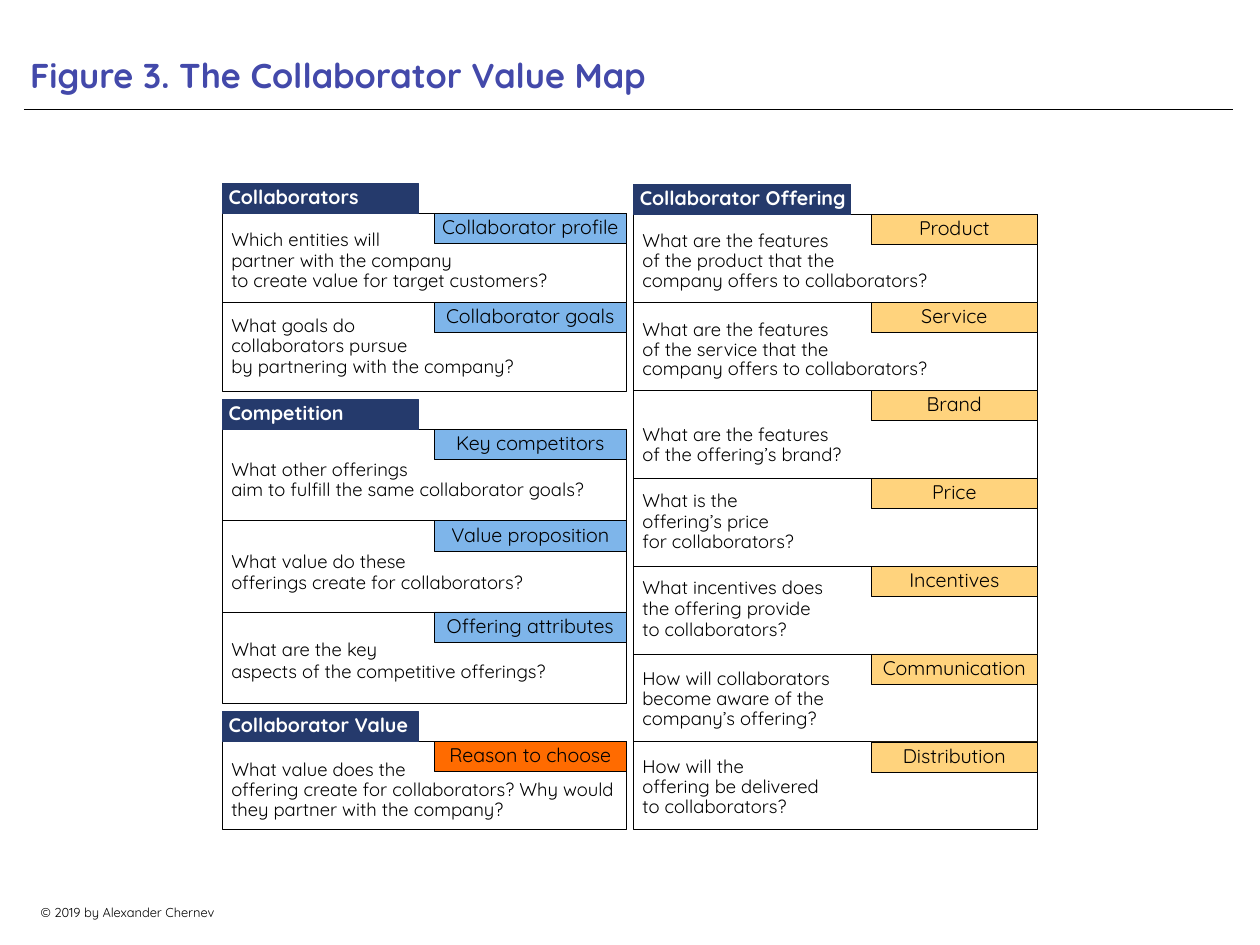
from pptx import Presentation
from pptx.dml.color import RGBColor
from pptx.enum.shapes import MSO_CONNECTOR as Connector, MSO_SHAPE as Preset
from pptx.enum.text import MSO_ANCHOR as Anchor, PP_ALIGN as Align
from pptx.oxml.ns import qn
from pptx.util import Pt
from lxml.etree import SubElement

PX = 9144  # 100 px to the inch
FONT = "Quicksand"
COLORS = {
    "title": "4349AA", "ink": "000000", "paper": "FFFFFF", "header": "253A6C",
    "blue": "7EB5EA", "yellow": "FFD37D", "orange": "FF6B00",
}
TAB_HEIGHT = 34

# Each row: tag, question, middle of the question below the row's top.
# "\n" starts a paragraph, "\v" breaks a line.
COLLABORATORS = [
    ("Collaborator profile", "Which entities will\npartner with the company\v"
     "to create value for target customers?", 54),
    ("Collaborator goals", "What goals do\vcollaborators pursue\n"
     "by partnering with the company?", 50),
]
COMPETITION = [
    ("Key competitors", "What other offerings\v"
     "aim to fulfill the same collaborator goals?", 58),
    ("Value proposition", "What value do these\n"
     "offerings create for collaborators?", 59),
    ("Offering attributes", "What are the key\n"
     "aspects of the competitive offerings?", 56),
]
VALUE = [
    ("Reason to choose", "What value does the\voffering create for collaborators? "
     "Why would they partner with the company?", 56),
]
OFFERING = [
    ("Product", "What are the features\vof the product that the\v"
     "company offers to collaborators?", 53),
    ("Service", "What are the features\vof the service that the\v"
     "company offers to collaborators?", 54),
    ("Brand", "What are the features\vof the offering’s brand?", 63),
    ("Price", "What is the\noffering’s price\vfor collaborators?", 50),
    ("Incentives", "What incentives does\nthe offering provide\n"
     "to collaborators?", 49),
    ("Communication", "How will collaborators\vbecome aware of the\v"
     "company’s offering?", 51),
    ("Distribution", "How will the\voffering be delivered\v"
     "to collaborators?", 52),
]


def color(name):
    return RGBColor.from_string(COLORS[name])


def px(*lengths):
    return [round(length * PX) for length in lengths]


def write(shape, text, size, ink="ink", bold=False, align=Align.LEFT,
          anchor=Anchor.MIDDLE, margins=(0, 0, 0, 0), spacing=0.9):
    frame = shape.text_frame
    frame.word_wrap = True
    frame.vertical_anchor = anchor
    (frame.margin_left, frame.margin_top,
     frame.margin_right, frame.margin_bottom) = px(*margins)
    frame.text = text
    for index, para in enumerate(frame.paragraphs):
        para.alignment = align
        para.line_spacing = spacing
        if index:
            para.space_before = Pt(1)
        font = para.font
        font.name, font.size, font.bold = FONT, Pt(size), bold
        font.color.rgb = color(ink)


def add_box(page, box, fill=None, line="ink", weight=0.75):
    shape = page.shapes.add_shape(Preset.RECTANGLE, *px(*box))
    shape.shadow.inherit = False
    if fill:
        shape.fill.solid()
        shape.fill.fore_color.rgb = color(fill)
    else:
        shape.fill.background()
    shape.line.color.rgb = color(line)
    shape.line.width = Pt(weight)
    return shape


def add_rule(page, left, right, y, weight):
    rule = page.shapes.add_connector(Connector.STRAIGHT, *px(left, y, right, y))
    rule.line.color.rgb = color("ink")
    rule.line.width = Pt(weight)
    SubElement(rule._element.spPr, qn("a:effectLst"))
    return rule


def add_heading(page, box):
    left, top, width, height = box
    add_rule(page, left, left + width, top + height + 9, 0.5)
    title = page.shapes.add_textbox(*px(*box))
    write(title, "Figure 3. The Collaborator Value Map", 28, "title", bold=True,
          anchor=Anchor.BOTTOM, margins=(7, 7, 7, 7), spacing=1.0)


def add_footer(page, box):
    footer = page.shapes.add_textbox(*px(*box))
    write(footer, "© 2019 by Alexander Chernev", 10.5, align=Align.CENTER,
          anchor=Anchor.TOP, margins=(10, 5, 10, 5), spacing=1.0)
    footer.text_frame.word_wrap = False


def add_panel(page, box, heading, rows, fill, header_width=221, tag_width=217):
    left, top, width, height = box
    right = left + width
    row_height = height / len(rows)
    panel = add_box(page, box)

    # Header tab on top of the panel
    header = add_box(page, (left, top - TAB_HEIGHT, header_width, TAB_HEIGHT),
                     "header", "header", 1)
    write(header, heading, 16, "paper", bold=True, margins=(7, 0, 0, 0))

    for index, (tag_text, question, middle) in enumerate(rows):
        row_top = top + index * row_height

        # Divider above every row but the first
        if index:
            divider = add_rule(page, left, right, row_top, 0.75)
            if 2 * index == len(rows):
                divider.begin_connect(panel, 1)
                divider.end_connect(panel, 3)

        # Question
        label = page.shapes.add_textbox(
            *px(left + 10, row_top + middle - 40, width - 18, 80))
        write(label, question, 15)

        # Tag in the right corner
        tag = add_box(page, (right - tag_width, row_top, tag_width, TAB_HEIGHT),
                      fill, weight=0.5)
        write(tag, tag_text, 16, align=Align.CENTER)


def main():
    deck = Presentation()
    deck.slide_width, deck.slide_height = px(1422, 1067)
    page = deck.slides.add_slide(deck.slide_layouts[6])
    add_heading(page, (27, 0, 1365, 115))
    add_panel(page, (251, 241, 456, 201), "Collaborators", COLLABORATORS, "blue")
    add_panel(page, (251, 485, 456, 309), "Competition", COMPETITION, "blue")
    add_panel(page, (251, 837, 456, 100), "Collaborator Value", VALUE, "orange")
    add_panel(page, (715, 242, 456, 695), "Collaborator Offering", OFFERING,
              "yellow", header_width=245, tag_width=188)
    add_footer(page, (27, 1016, 234, 28))
    deck.save("out.pptx")


if __name__ == "__main__":
    main()
